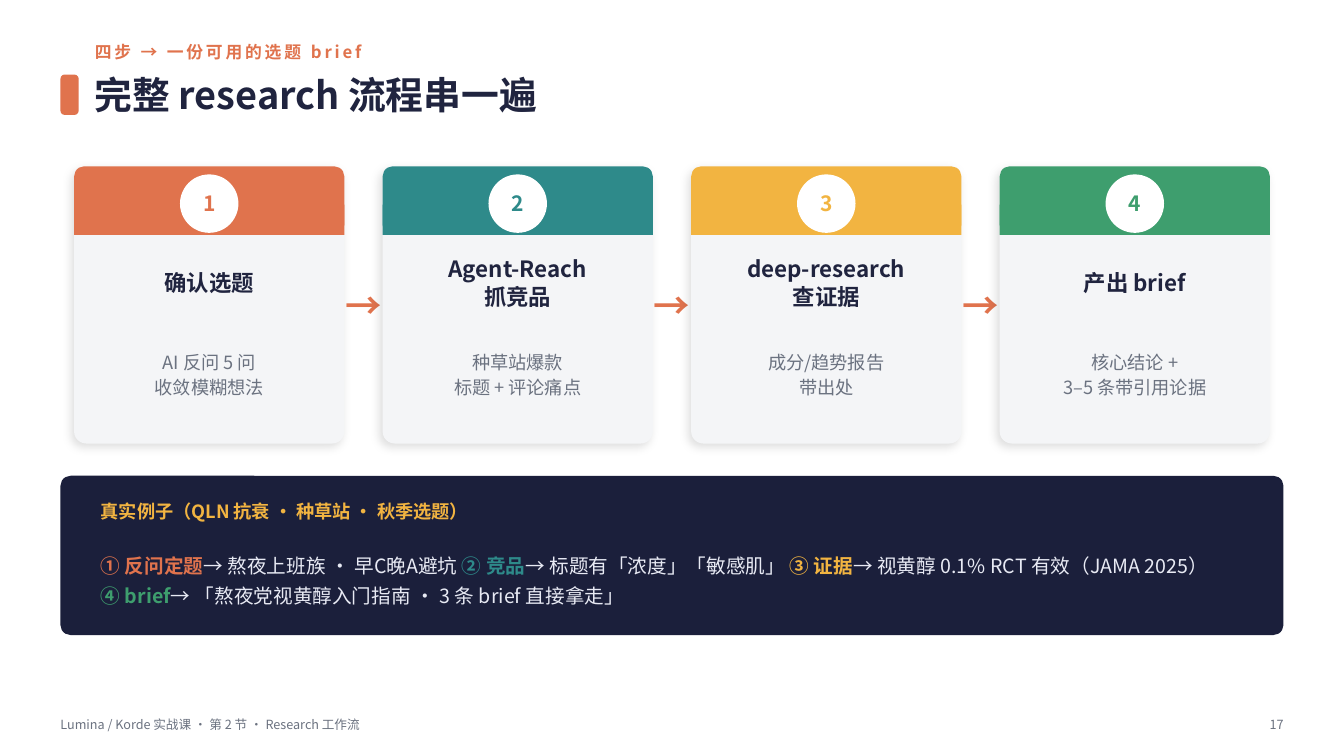
from collections import namedtuple
from lxml import etree
from pptx import Presentation
from pptx.dml.color import RGBColor
from pptx.enum.shapes import MSO_SHAPE
from pptx.enum.text import MSO_ANCHOR, PP_ALIGN
from pptx.oxml.ns import qn
from pptx.util import Inches, Pt

Box = namedtuple("Box", "left top width height")

FONT = "Noto Sans CJK SC"
ORANGE, TEAL, YELLOW, GREEN = "E0734D", "2E8A8A", "F2B441", "3E9E6E"
INK, GREY, WHITE = "20243F", "6B7280", "FFFFFF"
CARD, NAVY, PALE = "F4F5F7", "1B1F3B", "E8EAF4"

# Grid of the slide
WIDTH, HEIGHT, MARGIN = 13.33, 7.5, 0.6
CONTENT_WIDTH = WIDTH - 2 * MARGIN
CARD_WIDTH, CARD_GAP = 2.68, 0.38

STEPS = [
    (ORANGE, ["确认选题"], ["AI 反问 5 问", "收敛模糊想法"]),
    (TEAL, ["Agent-Reach", "抓竞品"], ["种草站爆款", "标题 + 评论痛点"]),
    (YELLOW, ["deep-research", "查证据"], ["成分/趋势报告", "带出处"]),
    (GREEN, ["产出 brief"], ["核心结论 +", "3–5 条带引用论据"]),
]
EXAMPLE = [
    [("① 反问定题", ORANGE), ("→ 熬夜上班族 · 早C晚A避坑 ", None),
     ("② 竞品", TEAL), ("→ 标题有「浓度」「敏感肌」 ", None),
     ("③ 证据", YELLOW), ("→ 视黄醇 0.1% RCT 有效（JAMA 2025）", None)],
    [("④ brief", GREEN), ("→ 「熬夜党视黄醇入门指南 · 3 条 brief 直接拿走」", None)],
]


def color(value):
    return RGBColor.from_string(value)


def place(box):
    return [Inches(length) for length in box]


def add_text(slide, box, paragraphs, size, fill=INK, bold=False,
             align=PP_ALIGN.LEFT, line_spacing=None, spacing=None):
    """Each paragraph is a string or a list of (text, accent colour) runs."""
    frame = slide.shapes.add_textbox(*place(box)).text_frame
    frame.word_wrap = True
    frame.vertical_anchor = MSO_ANCHOR.MIDDLE
    frame.margin_left = frame.margin_right = 0
    frame.margin_top = frame.margin_bottom = 0
    for index, content in enumerate(paragraphs):
        paragraph = frame.add_paragraph() if index else frame.paragraphs[0]
        paragraph.alignment = align
        if line_spacing:
            paragraph.line_spacing = line_spacing
        runs = [(content, None)] if isinstance(content, str) else content
        for text, accent in runs:
            run = paragraph.add_run()
            run.text = text
            run.font.size = Pt(size)
            run.font.bold = bold or accent is not None
            run.font.color.rgb = color(accent or fill)
            run.font.name = FONT
            properties = run.font._element
            etree.SubElement(properties, qn("a:ea"), typeface=FONT)
            if spacing:
                properties.set("spc", str(spacing * 100))


def add_block(slide, kind, box, fill, radius=None):
    shape = slide.shapes.add_shape(kind, *place(box))
    shape.shadow.inherit = False
    shape.fill.solid()
    shape.fill.fore_color.rgb = color(fill)
    shape.line.fill.background()
    if radius:
        shape.adjustments[0] = radius / min(box.width, box.height)
    return shape


def add_soft_shadow(shape):
    effects = shape._element.spPr.find(qn("a:effectLst"))
    shadow = etree.SubElement(
        effects, qn("a:outerShdw"), blurRad=str(Pt(7)), dist=str(Pt(3)),
        dir=str(135 * 60000), algn="bl", rotWithShape="0")
    tint = etree.SubElement(shadow, qn("a:srgbClr"), val="000000")
    etree.SubElement(tint, qn("a:alpha"), val="12000")


def add_header(slide, box, kicker, title):
    text_left = box.left + 0.34
    text_width = box.width - 0.34
    add_text(slide, Box(text_left, box.top, text_width, 0.3), [kicker], 12,
             fill=ORANGE, bold=True, spacing=2)
    add_block(slide, MSO_SHAPE.ROUNDED_RECTANGLE,
              Box(box.left, box.top + 0.38, 0.18, 0.4), ORANGE, radius=0.04)
    add_text(slide, Box(text_left, box.top + 0.28, text_width, 0.6), [title], 27,
             bold=True)


def add_step(slide, box, number, accent, title, details):
    center = box.left + box.width / 2

    def centered(top, width, height):
        return Box(center - width / 2, box.top + top, width, height)

    # Card with a coloured band, square at its lower edge
    add_soft_shadow(add_block(slide, MSO_SHAPE.ROUNDED_RECTANGLE, box, CARD, radius=0.12))
    add_block(slide, MSO_SHAPE.ROUNDED_RECTANGLE, centered(0, box.width, 0.68),
              accent, radius=0.1)
    add_block(slide, MSO_SHAPE.RECTANGLE, centered(0.38, box.width, 0.3), accent)

    # Number, title and details
    badge = centered(0.08, 0.58, 0.58)
    add_block(slide, MSO_SHAPE.OVAL, badge, WHITE)
    add_text(slide, badge, [str(number)], 15, fill=accent, bold=True,
             align=PP_ALIGN.CENTER)
    add_text(slide, centered(0.82, 2.44, 0.65), title, 16, bold=True,
             align=PP_ALIGN.CENTER, line_spacing=1.05)
    add_text(slide, centered(1.58, 2.38, 0.95), details, 13, fill=GREY,
             align=PP_ALIGN.CENTER, line_spacing=1.12)


def add_process(slide, box):
    for index, (accent, title, details) in enumerate(STEPS):
        left = box.left + index * (CARD_WIDTH + CARD_GAP)
        add_step(slide, Box(left, box.top, CARD_WIDTH, box.height),
                 index + 1, accent, title, details)
        if index < len(STEPS) - 1:
            arrow = Box(left + CARD_WIDTH - 0.02, box.top, CARD_GAP + 0.04, box.height)
            add_text(slide, arrow, ["→"], 26, fill=ORANGE, bold=True,
                     align=PP_ALIGN.CENTER)


def add_example(slide, box):
    add_block(slide, MSO_SHAPE.ROUNDED_RECTANGLE, box, NAVY, radius=0.1)
    left, width = box.left + 0.4, box.width - 0.8
    add_text(slide, Box(left, box.top + 0.18, width, 0.35),
             ["真实例子（QLN 抗衰 · 种草站 · 秋季选题）"], 13, fill=YELLOW, bold=True)
    add_text(slide, Box(left, box.top + 0.56, width, 0.9), EXAMPLE, 14,
             fill=PALE, line_spacing=1.25)


def add_footer(slide, box, label, page):
    add_text(slide, Box(box.left, box.top, 9, box.height), [label], 9, fill=GREY)
    add_text(slide, Box(box.left + box.width - 0.7, box.top, 0.7, box.height),
             [page], 9, fill=GREY, align=PP_ALIGN.RIGHT)


def main():
    presentation = Presentation()
    presentation.slide_width = Inches(WIDTH)
    presentation.slide_height = Inches(HEIGHT)
    slide = presentation.slides.add_slide(presentation.slide_layouts[6])

    process_width = len(STEPS) * (CARD_WIDTH + CARD_GAP) - CARD_GAP
    add_header(slide, Box(MARGIN, 0.36, CONTENT_WIDTH, 0.88),
               "四步 → 一份可用的选题 brief", "完整 research 流程串一遍")
    add_process(slide, Box((WIDTH - process_width) / 2, 1.65, process_width, 2.75))
    add_example(slide, Box(MARGIN, 4.72, CONTENT_WIDTH, 1.58))
    add_footer(slide, Box(MARGIN, 7.04, CONTENT_WIDTH, 0.3),
               "Lumina / Korde 实战课 · 第 2 节 · Research 工作流", "17")
    presentation.save("out.pptx")


if __name__ == "__main__":
    main()
